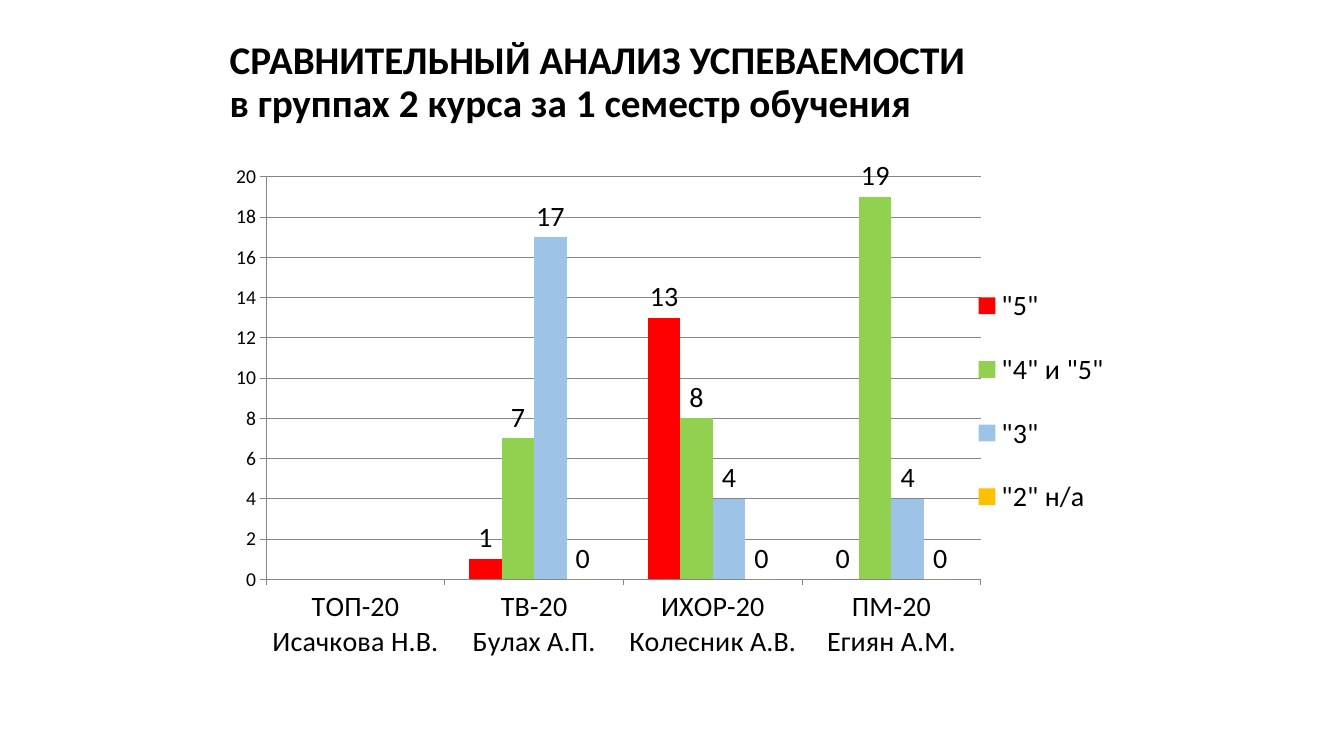
import pptx
import pptx.chart.data
import pptx.dml.color
import pptx.enum.chart
import pptx.enum.text
import pptx.oxml
import pptx.oxml.ns
import pptx.util
from dataclasses import dataclass

Cm = pptx.util.Cm
Pt = pptx.util.Pt


@dataclass(frozen=True)
class Theme:
    font: str = "Calibri"
    ink: str = "000000"
    grid: str = "868686"
    title: int = 28
    label: int = 20
    scale: int = 14


THEME = Theme()
TITLE = "СРАВНИТЕЛЬНЫЙ АНАЛИЗ УСПЕВАЕМОСТИ\vв группах 2 курса за 1 семестр обучения"
GROUPS = ["ТОП-20\nИсачкова Н.В.", "ТВ-20\nБулах А.П.",
          "ИХОР-20\nКолесник А.В.", "ПМ-20\nЕгиян А.М."]
MARKS = [
    ('"5"', "FF0000", (None, 1, 13, 0)),
    ('"4" и "5"', "92D050", (None, 7, 8, 19)),
    ('"3"', "9DC3E6", (None, 17, 4, 4)),
    ('"2" н/а', "FFC000", (None, 0, 0, 0)),
]


def rgb(code):
    return pptx.dml.color.RGBColor.from_string(code)


def style(font, size, bold=False):
    font.name = THEME.font
    font.size = Pt(size)
    font.bold = bold
    font.color.rgb = rgb(THEME.ink)


def line(form):
    form.line.color.rgb = rgb(THEME.grid)
    form.line.width = Pt(0.75)


def place(part, index, inner, **box):
    """Fix a chart part at x, y, w, h, given as shares of the chart."""
    for old in part.xpath("c:layout"):
        part.remove(old)
    target = '<c:layoutTarget val="inner"/>' if inner else ""
    modes = "".join(f'<c:{k}Mode val="edge"/>' for k in "xy")
    sizes = "".join(f'<c:{k} val="{v}"/>' for k, v in box.items())
    part.insert(index, pptx.oxml.parse_xml(
        f'<c:layout {pptx.oxml.ns.nsdecls("c")}><c:manualLayout>'
        f"{target}{modes}{sizes}</c:manualLayout></c:layout>"))


def add_title(slide):
    box = slide.shapes.add_textbox(Cm(5.54), Cm(0.91), Cm(23.39), Cm(2.8))
    frame = box.text_frame
    frame.word_wrap = True
    frame.vertical_anchor = pptx.enum.text.MSO_ANCHOR.TOP
    frame.text = TITLE
    para = frame.paragraphs[0]
    para.line_spacing = 0.9
    for run in para.runs:
        style(run.font, THEME.title, True)


def set_axes(chart):
    style(chart.category_axis.tick_labels.font, THEME.label)
    scale = chart.value_axis
    style(scale.tick_labels.font, THEME.scale)
    scale.minimum_scale, scale.maximum_scale, scale.major_unit = 0, 20, 2
    scale.has_major_gridlines = True
    line(scale.major_gridlines.format)
    for axis in (chart.category_axis, scale):
        axis.major_tick_mark = pptx.enum.chart.XL_TICK_MARK.OUTSIDE
        line(axis.format)


def set_bars(plot):
    plot.gap_width = 150
    plot.overlap = 0
    plot.vary_by_categories = False
    for bars, (_, color, _) in zip(plot.series, MARKS):
        bars.format.fill.solid()
        bars.format.fill.fore_color.rgb = rgb(color)
        bars.invert_if_negative = False
        labels = bars.data_labels
        labels.show_value = True
        labels.position = pptx.enum.chart.XL_LABEL_POSITION.OUTSIDE_END
        style(labels.font, THEME.label)


def add_chart(slide):
    data = pptx.chart.data.CategoryChartData()
    data.categories = GROUPS
    for name, _, values in MARKS:
        data.add_series(name, values)
    chart = slide.shapes.add_chart(
        pptx.enum.chart.XL_CHART_TYPE.COLUMN_CLUSTERED,
        Cm(5.54), Cm(3.94), Cm(23.39), Cm(13), data).chart
    style(chart.font, THEME.scale)
    chart.has_title = False
    set_axes(chart)
    set_bars(chart.plots[0])
    chart.has_legend = True
    chart.legend.position = pptx.enum.chart.XL_LEGEND_POSITION.RIGHT
    chart.legend.include_in_layout = False
    style(chart.legend.font, THEME.label)
    root = chart.element
    place(root.xpath("c:chart/c:plotArea")[0], 0, True,
          x=0.05, y=0.04, w=0.77, h=0.78)
    place(root.xpath("c:chart/c:legend")[0], 1, False,
          x=0.8, y=0.2, w=0.17, h=0.55)


def main():
    deck = pptx.Presentation()
    deck.slide_width, deck.slide_height = Cm(33.87), Cm(19.05)
    slide = deck.slides.add_slide(deck.slide_layouts[6])
    add_title(slide)
    add_chart(slide)
    deck.save("out.pptx")


if __name__ == "__main__":
    main()
